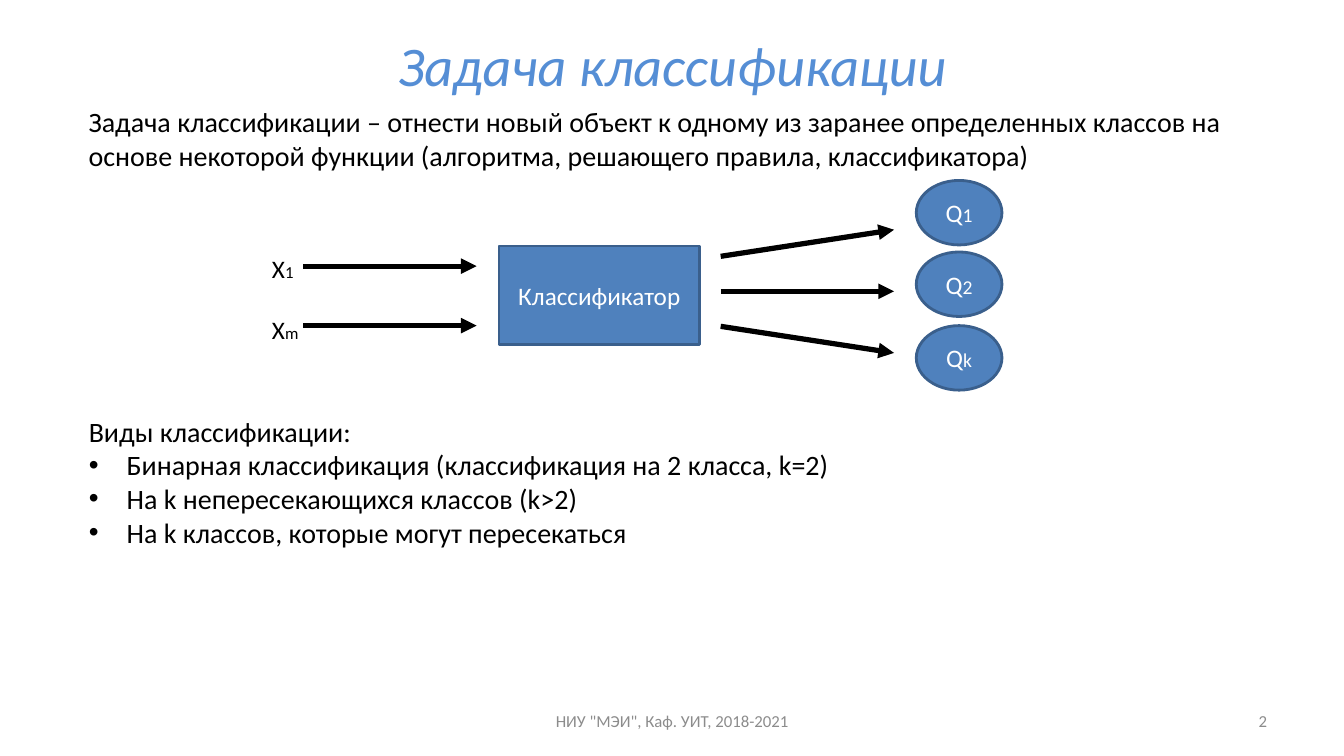
from dataclasses import dataclass

from lxml.etree import SubElement
from pptx import Presentation
from pptx.dml.color import RGBColor
from pptx.enum.shapes import MSO_CONNECTOR, MSO_SHAPE
from pptx.enum.text import MSO_ANCHOR, MSO_AUTO_SIZE, PP_ALIGN
from pptx.oxml.ns import qn
from pptx.util import Pt

FONT = "Calibri"
BLACK = RGBColor(0x00, 0x00, 0x00)
WHITE = RGBColor(0xFF, 0xFF, 0xFF)
GRAY = RGBColor(0x8C, 0x8C, 0x8C)
TITLE_BLUE = RGBColor(0x55, 0x8E, 0xD5)
FILL_BLUE = RGBColor(0x4F, 0x81, 0xBD)
LINE_BLUE = RGBColor(0x3A, 0x5F, 0x8C)

TEXT_LEFT, TEXT_WIDTH = 56.2, 869
BULLET_INDENT = 27


@dataclass(frozen=True)
class Area:
    left: float
    top: float
    width: float
    height: float

    def lengths(self) -> tuple:
        return Pt(self.left), Pt(self.top), Pt(self.width), Pt(self.height)


@dataclass(frozen=True)
class Label:
    area: Area
    text: str
    size: float
    color: RGBColor
    align: PP_ALIGN
    anchor: MSO_ANCHOR


@dataclass(frozen=True)
class Node:
    kind: MSO_SHAPE
    area: Area
    text: str
    index: str = ""


@dataclass(frozen=True)
class Arrow:
    left: float
    start: float
    end: float
    length: float = 123.8


LABELS = [
    Label(Area(328.3, 500.4, 303.8, 28.8), 'НИУ "МЭИ", Каф. УИТ, 2018-2021', 12, GRAY,
          PP_ALIGN.CENTER, MSO_ANCHOR.MIDDLE),
    Label(Area(688.3, 500.4, 223.9, 28.8), "2", 12, GRAY, PP_ALIGN.RIGHT, MSO_ANCHOR.MIDDLE),
    Label(Area(TEXT_LEFT, 71.3, TEXT_WIDTH, 55.4),
          "Задача классификации – отнести новый объект к одному из заранее определенных "
          "классов на основе некоторой функции (алгоритма, решающего правила, классификатора)",
          20, BLACK, PP_ALIGN.LEFT, MSO_ANCHOR.TOP),
]

NODES = [Node(MSO_SHAPE.RECTANGLE, Area(356.4, 175.7, 143.3, 70.6), "Классификатор")] + [
    Node(MSO_SHAPE.OVAL, Area(654.5, top, 61.2, 46.1), "Q", index)
    for index, top in (("1", 128.9), ("2", 180), ("k", 232.6))
]

ARROWS = [Arrow(216.7, y, y) for y in (190.1, 232.6)] + [
    Arrow(514.8, 208.1 + 25 * step, 208.1 + 44 * step) for step in (-1, 0, 1)
]

KINDS = [
    "Виды классификации:",
    "Бинарная классификация (классификация на 2 класса, k=2)",
    "На k непересекающихся классов (k>2)",
    "На k классов, которые могут пересекаться",
]


def place(box, area: Area) -> None:
    box.left, box.top, box.width, box.height = area.lengths()


def format_para(para, size: float, color: RGBColor, align: PP_ALIGN = PP_ALIGN.LEFT) -> None:
    para.alignment = align
    for span in para.runs:
        span.font.name = FONT
        span.font.size = Pt(size)
        span.font.color.rgb = color


def write_indexed(para, text: str, index: str, size: float, index_size: float,
                  color: RGBColor, align: PP_ALIGN) -> None:
    para.text = text
    if index:
        para.add_run().text = index
    format_para(para, size, color, align)
    if index:
        para.runs[-1].font.size = Pt(index_size)


def add_label(page, label: Label) -> None:
    box = page.shapes.add_textbox(*label.area.lengths())
    frame = box.text_frame
    frame.word_wrap = True
    frame.vertical_anchor = label.anchor
    frame.text = label.text
    format_para(frame.paragraphs[0], label.size, label.color, label.align)


def add_node(page, node: Node) -> None:
    box = page.shapes.add_shape(node.kind, *node.area.lengths())
    box.shadow.inherit = False
    box.fill.solid()
    box.fill.fore_color.rgb = FILL_BLUE
    box.line.color.rgb = LINE_BLUE
    box.line.width = Pt(2)
    box.text_frame.vertical_anchor = MSO_ANCHOR.MIDDLE
    write_indexed(box.text_frame.paragraphs[0], node.text, node.index, 18, 14, WHITE,
                  PP_ALIGN.CENTER)


def add_arrow(page, arrow: Arrow) -> None:
    connector = page.shapes.add_connector(
        MSO_CONNECTOR.STRAIGHT, Pt(arrow.left), Pt(arrow.start),
        Pt(arrow.left + arrow.length), Pt(arrow.end))
    connector.line.color.rgb = BLACK
    connector.line.width = Pt(3.75)
    properties = connector._element.spPr
    SubElement(properties.find(qn("a:ln")), qn("a:tailEnd"), type="triangle")
    SubElement(properties, qn("a:effectLst"))


def add_inputs(page) -> None:
    box = page.shapes.add_textbox(*Area(187.2, 177.1, 33.8, 72.7).lengths())
    frame = box.text_frame
    frame.word_wrap = False
    first, last = frame.paragraphs[0], frame.add_paragraph()
    for para, index in ((first, "1"), (last, "m")):
        write_indexed(para, "Х", index, 18, 12, BLACK, PP_ALIGN.LEFT)
    last.space_before = Pt(22)


def fill_title(title) -> None:
    place(title, Area(66.2, 21.6, 828, 48.2))
    frame = title.text_frame
    frame.auto_size = MSO_AUTO_SIZE.NONE
    frame.vertical_anchor = MSO_ANCHOR.MIDDLE
    frame.text = "Задача классификации"
    format_para(frame.paragraphs[0], 40, TITLE_BLUE, PP_ALIGN.CENTER)
    frame.paragraphs[0].runs[0].font.italic = True


def fill_kinds(body) -> None:
    place(body, Area(TEXT_LEFT, 292.3, TEXT_WIDTH, 104.4))
    frame = body.text_frame
    frame.auto_size = MSO_AUTO_SIZE.NONE
    frame.text = "\n".join(KINDS)
    for number, para in enumerate(frame.paragraphs):
        format_para(para, 20, BLACK)
        para.space_before = Pt(0)
        indent = Pt(BULLET_INDENT) if number else 0
        properties = para._p.get_or_add_pPr()
        properties.set("marL", str(indent))
        properties.set("indent", str(-indent))
        if number:
            SubElement(properties, qn("a:buFont"), typeface="Arial")
            SubElement(properties, qn("a:buChar"), char="•")
        else:
            SubElement(properties, qn("a:buNone"))


def main() -> None:
    deck = Presentation()
    deck.slide_width, deck.slide_height = Pt(960), Pt(540)
    page = deck.slides.add_slide(deck.slide_layouts[1])
    fill_title(page.shapes.title)
    fill_kinds(page.placeholders[1])
    for label in LABELS:
        add_label(page, label)
    for node in NODES:
        add_node(page, node)
    for arrow in ARROWS:
        add_arrow(page, arrow)
    add_inputs(page)
    deck.save("out.pptx")


if __name__ == "__main__":
    main()
